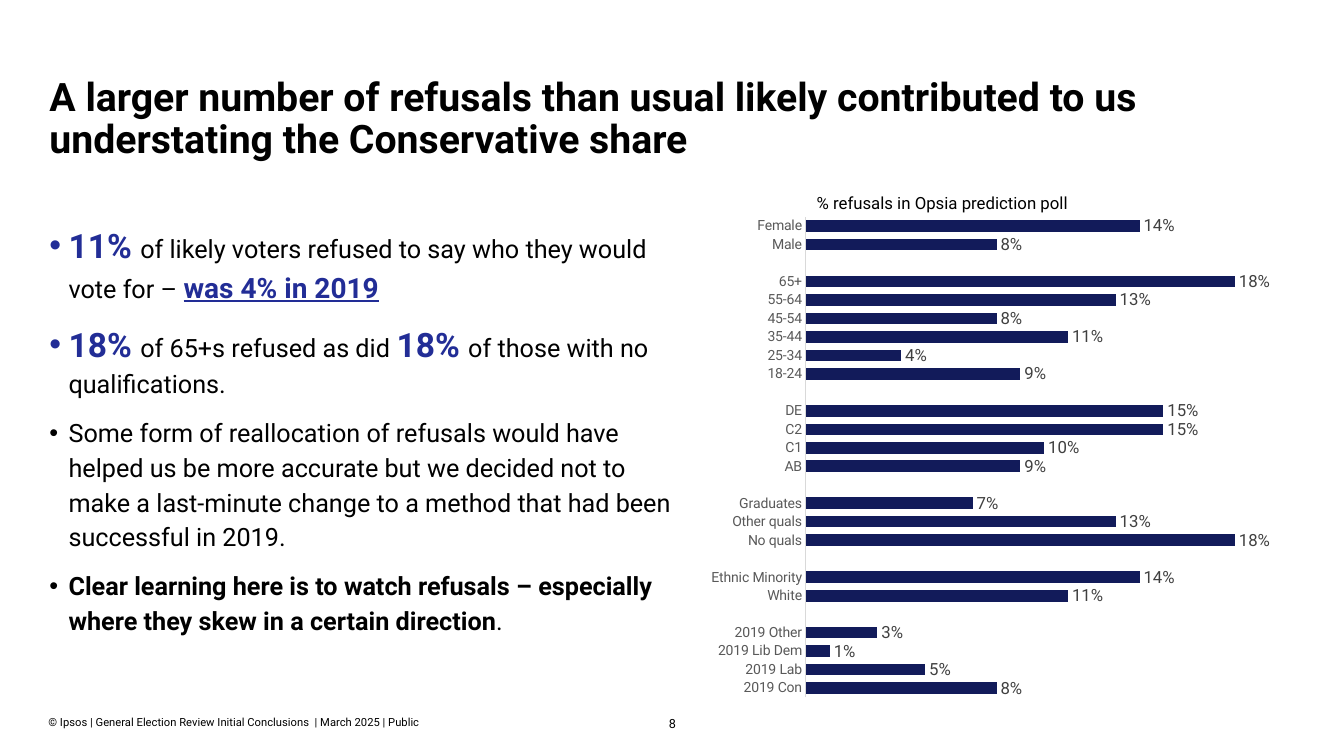
from lxml.etree import SubElement
from pptx import Presentation
from pptx.chart.data import CategoryChartData
from pptx.dml.color import RGBColor
from pptx.enum.chart import XL_CHART_TYPE as ChartType, XL_LABEL_POSITION as LabelPosition
from pptx.enum.chart import XL_TICK_MARK as TickMark
from pptx.enum.text import MSO_ANCHOR as Anchor, MSO_AUTO_SIZE as AutoSize, PP_ALIGN as Align
from pptx.oxml import parse_xml
from pptx.oxml.ns import nsdecls, qn
from pptx.util import Inches, Pt

FONT = "Roboto"
BLACK = RGBColor(0x00, 0x00, 0x00)
BLUE = RGBColor(0x22, 0x2D, 0x96)
NAVY = RGBColor(0x12, 0x1B, 0x5A)
AXIS_TEXT = RGBColor(0x59, 0x59, 0x59)
AXIS_LINE = RGBColor(0xD9, 0xD9, 0xD9)
LABEL_TEXT = RGBColor(0x40, 0x40, 0x40)

BODY = {"size": 18}
BODY_BOLD = {"size": 18, "bold": True}
FIGURE = {"size": 24, "bold": True, "color": BLUE}
LINK_LIKE = {"size": 20, "bold": True, "color": BLUE, "underline": True}

BULLETS = [
    [("11% ", FIGURE),
     ("of likely voters refused to say who they would vote for – ", BODY),
     ("was 4% in 2019", LINK_LIKE)],
    [("18% ", FIGURE), ("of 65+s refused as did ", BODY),
     ("18% ", FIGURE), ("of those with no qualifications.", BODY)],
    [("Some form of reallocation of refusals would have helped us be more accurate "
      "but we decided not to make a last-minute change to a method that had been "
      "successful in 2019.", BODY)],
    [("Clear learning here is to watch refusals – especially where they skew "
      "in a certain direction", BODY_BOLD), (".", BODY)],
]

REFUSAL_GROUPS = [
    {"2019 Con": 0.08, "2019 Lab": 0.05, "2019 Lib Dem": 0.01, "2019 Other": 0.03},
    {"White": 0.11, "Ethnic Minority": 0.14},
    {"No quals": 0.18, "Other quals": 0.13, "Graduates": 0.07},
    {"AB": 0.09, "C1": 0.1, "C2": 0.15, "DE": 0.15},
    {"18-24": 0.09, "25-34": 0.04, "35-44": 0.11, "45-54": 0.08, "55-64": 0.13, "65+": 0.18},
    {"Male": 0.08, "Female": 0.14},
]


class SlideBuilder:
    """Holds the font and the current slide, and adds elements to it."""

    def __init__(self, slide, font_name):
        self.slide = slide
        self.font_name = font_name

    def style_font(self, font, size, color=BLACK, **values):
        font.color.rgb = color
        values = {"name": self.font_name, "size": Pt(size), "bold": False, **values}
        for name, value in values.items():
            setattr(font, name, value)

    def prepare_frame(self, shape, anchor=Anchor.TOP):
        values = {"margin_left": 0, "margin_top": 0, "margin_right": 0, "margin_bottom": 0,
                  "word_wrap": True, "auto_size": AutoSize.NONE, "vertical_anchor": anchor}
        for name, value in values.items():
            setattr(shape.text_frame, name, value)
        return shape.text_frame

    def add_runs(self, paragraph, runs, **layout):
        for name, value in layout.items():
            setattr(paragraph, name, value)
        for text, style in runs:
            run = paragraph.add_run()
            run.text = text
            self.style_font(run.font, **style)

    def add_title(self, text, box):
        title = self.slide.shapes.title
        title.left, title.top, title.width, title.height = map(Inches, box)
        paragraph = self.prepare_frame(title).paragraphs[0]
        self.add_runs(paragraph, [(text, {"size": 28, "bold": True})],
                      line_spacing=0.9, alignment=Align.LEFT)

    def add_text(self, text, box, size, anchor=Anchor.TOP, **layout):
        shape = self.slide.shapes.add_textbox(*map(Inches, box))
        frame = self.prepare_frame(shape, anchor)
        self.add_runs(frame.paragraphs[0], [(text, {"size": size})], **layout)

    def add_bullets(self, items, box):
        shape = self.slide.shapes.add_textbox(*map(Inches, box))
        frame = self.prepare_frame(shape)
        for index, runs in enumerate(items):
            paragraph = frame.add_paragraph() if index else frame.paragraphs[0]
            properties = paragraph._p.get_or_add_pPr()
            properties.set("marL", str(Inches(0.19)))
            properties.set("indent", str(-Inches(0.19)))
            SubElement(properties, qn("a:buFont"), typeface="Arial")
            SubElement(properties, qn("a:buChar"), char="•")
            self.add_runs(paragraph, runs, line_spacing=1.15,
                          space_before=Pt(4 if index else 0), space_after=Pt(6))

    def add_bar_chart(self, groups, box, plot_box):
        """Draw one bar per category, with an empty category between groups."""
        data = CategoryChartData(number_format="0%")
        values = []
        for index, group in enumerate(groups):
            if index:
                data.add_category("")
                values.append(None)
            for category, value in group.items():
                data.add_category(category)
                values.append(value)
        data.add_series("Refusals", values)
        chart = self.slide.shapes.add_chart(
            ChartType.BAR_CLUSTERED, *map(Inches, box), data).chart
        chart.has_legend = chart.has_title = False
        self.style_font(chart.font, 10)

        plot = chart.plots[0]
        plot.gap_width, plot.overlap, plot.vary_by_categories = 60, -89, False
        bars = plot.series[0]
        bars.format.fill.solid()
        bars.format.fill.fore_color.rgb = NAVY
        plot.has_data_labels = True
        labels = plot.data_labels
        label_values = {"show_value": True, "number_format": "0%",
                        "number_format_is_linked": False,
                        "position": LabelPosition.OUTSIDE_END}
        for name, value in label_values.items():
            setattr(labels, name, value)
        self.style_font(labels.font, 12, LABEL_TEXT)

        category_axis, value_axis = chart.category_axis, chart.value_axis
        category_axis.major_tick_mark = category_axis.minor_tick_mark = TickMark.NONE
        category_axis.format.line.color.rgb = AXIS_LINE
        category_axis.format.line.width = Pt(0.75)
        self.style_font(category_axis.tick_labels.font, 10, AXIS_TEXT)
        value_axis.minimum_scale, value_axis.maximum_scale = 0, 0.2
        value_axis.has_major_gridlines = value_axis.visible = False
        self.place_plot(chart, plot_box)

    def place_plot(self, chart, plot_box):
        """Fix the inner plot area, given as fractions of the chart."""
        plot_area = chart._chartSpace.find(f".//{qn('c:plotArea')}")
        for layout in plot_area.findall(qn("c:layout")):
            plot_area.remove(layout)
        sides = "".join(f'<c:{name} val="{value}"/>' for name, value in zip("xywh", plot_box))
        plot_area.insert(0, parse_xml(
            f'<c:layout {nsdecls("c")}><c:manualLayout><c:layoutTarget val="inner"/>'
            f'<c:xMode val="edge"/><c:yMode val="edge"/>{sides}'
            '</c:manualLayout></c:layout>'))


def main():
    presentation = Presentation()
    presentation.slide_width, presentation.slide_height = Inches(13.33), Inches(7.5)
    slide = presentation.slides.add_slide(presentation.slide_layouts[5])
    builder = SlideBuilder(slide, FONT)

    builder.add_title("A larger number of refusals than usual likely contributed to us "
                      "understating the Conservative share", (0.49, 0.77, 12.36, 0.78))
    builder.add_bullets(BULLETS, (0.49, 2.17, 6.17, 4.14))
    builder.add_bar_chart(REFUSAL_GROUPS, (6.93, 2.05, 5.91, 4.97), (0.18, 0.02, 0.8, 0.96))
    builder.add_text("% refusals in Opsia prediction poll", (8.1, 1.88, 3.83, 0.21), 12,
                     line_spacing=1.15)
    builder.add_text("© Ipsos | General Election Review Initial Conclusions  | March 2025 | Public",
                     (0.48, 7.1, 5.11, 0.13), 8, anchor=Anchor.BOTTOM)
    builder.add_text("8", (6.4, 7.09, 0.54, 0.15), 9, alignment=Align.CENTER, line_spacing=1.1)
    presentation.save("out.pptx")


if __name__ == "__main__":
    main()
